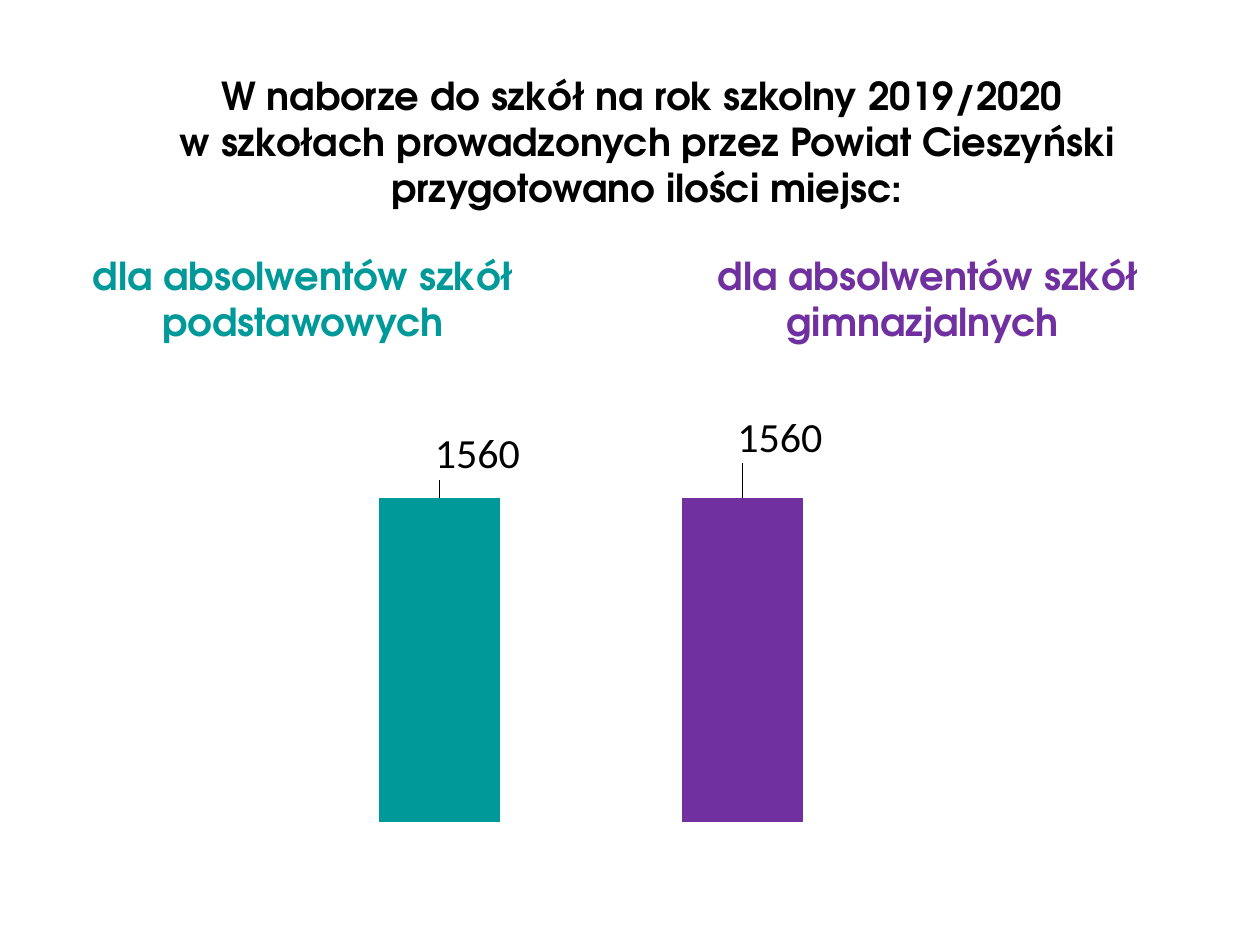
from dataclasses import dataclass

from lxml.etree import SubElement
from pptx import Presentation
from pptx.chart.data import CategoryChartData
from pptx.dml.color import RGBColor
from pptx.enum.chart import XL_CHART_TYPE, XL_LABEL_POSITION
from pptx.enum.text import MSO_AUTO_SIZE, PP_ALIGN
from pptx.oxml import parse_xml
from pptx.oxml.ns import nsdecls, qn
from pptx.util import Pt


@dataclass(frozen=True)
class Theme:
    ink: str = "000000"
    teal: str = "009999"
    plum: str = "7030A0"
    head: str = "TeX Gyre Adventor"
    body: str = "Calibri"
    title: float = 22
    small: float = 10
    value: float = 24


def assign(item, **values):
    for name, value in values.items():
        setattr(item, name, value)


def layout(**values):
    """Build a manual chart layout from fractions of the chart area."""
    node = parse_xml(f"<c:layout {nsdecls('c')}><c:manualLayout/></c:layout>")
    for name, value in values.items():
        SubElement(node[0], qn(f"c:{name}")).set("val", str(value))
    return node


class Deck:
    def __init__(self, theme, width, height):
        self.theme = theme
        self.show = Presentation()
        assign(self.show, slide_width=Pt(width), slide_height=Pt(height))
        self.slide = self.show.slides.add_slide(self.show.slide_layouts[6])

    def font(self, font, face, size, color, bold=False):
        assign(font, name=face, size=Pt(size), bold=bold)
        font.color.rgb = RGBColor.from_string(color)

    def text(self, box, lines, color):
        frame = self.slide.shapes.add_textbox(*map(Pt, box)).text_frame
        assign(frame, word_wrap=True, auto_size=MSO_AUTO_SIZE.SHAPE_TO_FIT_TEXT,
               text="\n".join(lines))
        for para in frame.paragraphs:
            para.alignment = PP_ALIGN.CENTER
            self.font(para.runs[0].font, self.theme.head, self.theme.title,
                      color, True)

    def chart(self, box, values, colors, shifts):
        """Draw one column per value, its label moved by the given shift."""
        theme = self.theme
        data = CategoryChartData()
        data.categories = [str(n + 1) for n in range(len(values))]
        data.add_series("Series 1", values)
        chart = self.slide.shapes.add_chart(
            XL_CHART_TYPE.COLUMN_CLUSTERED, *map(Pt, box), data).chart
        assign(chart, has_legend=False, has_title=False)
        self.font(chart.font, theme.body, theme.small, theme.ink)
        for axis in (chart.category_axis, chart.value_axis):
            assign(axis, visible=False, has_major_gridlines=False)
        assign(chart.value_axis, minimum_scale=0, maximum_scale=1800)

        plot = chart.plots[0]
        assign(plot, gap_width=150, vary_by_categories=False)
        area = chart.element.find(".//" + qn("c:plotArea"))
        for old in area.findall(qn("c:layout")):
            area.remove(old)
        area.insert(0, layout(layoutTarget="inner", xMode="edge", yMode="edge",
                              x=0.02, y=0.07, w=0.96, h=0.91))

        bars = plot.series[0]
        for n, color in enumerate(colors):
            point = bars.points[n]
            point.format.fill.solid()
            point.format.fill.fore_color.rgb = RGBColor.from_string(color)
            label = point.data_label
            label.position = XL_LABEL_POSITION.OUTSIDE_END
            self.font(label.font, theme.body, theme.value, theme.ink)
        marks = chart.element.iter(qn("c:dLbl"))
        for mark, (x, y) in zip(list(marks), shifts):
            mark.insert(1, layout(x=x, y=y))

    def save(self):
        self.show.save("out.pptx")


def main():
    theme = Theme()
    deck = Deck(theme, 720, 540)
    deck.text((42.5, 37.4, 654.5, 86.4),
              ["W naborze do szkół na rok szkolny 2019/2020 ",
               "w szkołach prowadzonych przez Powiat Cieszyński "
               "przygotowano ilości miejsc:"], theme.ink)
    deck.text((14.4, 140.4, 317.5, 59.8),
              ["dla absolwentów szkół podstawowych"], theme.teal)
    deck.text((365.8, 140.4, 329, 59.8),
              ["dla absolwentów szkół gimnazjalnych "], theme.plum)
    deck.chart((157.7, 236.2, 360, 238.3), (1560, 1560),
               (theme.teal, theme.plum), ((0.06, -0.03), (0.06, -0.07)))
    deck.save()


if __name__ == "__main__":
    main()
